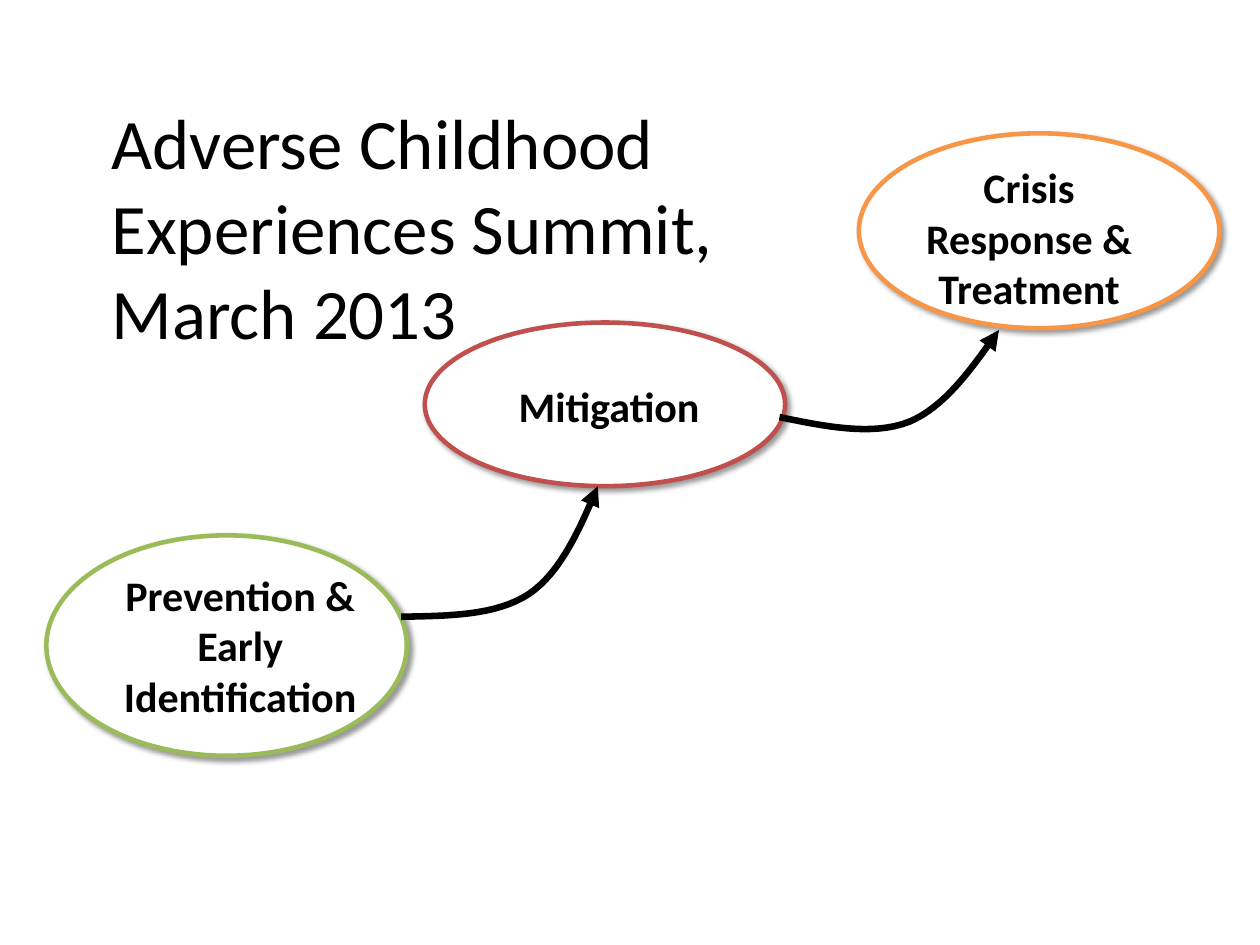
from lxml import etree
from pptx import Presentation
from pptx.dml.color import RGBColor
from pptx.enum.shapes import MSO_SHAPE
from pptx.enum.text import MSO_ANCHOR, MSO_AUTO_SIZE, PP_ALIGN
from pptx.oxml import parse_xml
from pptx.oxml.ns import nsdecls, qn
from pptx.util import Inches, Pt

BLACK = RGBColor(0x00, 0x00, 0x00)
WHITE = RGBColor(0xFF, 0xFF, 0xFF)
GREEN = RGBColor(0x9B, 0xBB, 0x59)
RED = RGBColor(0xC0, 0x50, 0x4D)
ORANGE = RGBColor(0xF7, 0x96, 0x46)

SHADOW = (
    f'<a:outerShdw {nsdecls("a")} blurRad="{Pt(4)}" dist="{Pt(3)}" dir="2700000" rotWithShape="0">'
    '<a:srgbClr val="000000"><a:alpha val="40000"/></a:srgbClr></a:outerShdw>'
)
CURVE_STEPS = 16


def write_text(shape, text, size, bold=False, align=PP_ALIGN.LEFT, space_after=0):
    frame = shape.text_frame
    frame.word_wrap = True
    frame.auto_size = MSO_AUTO_SIZE.NONE
    frame.vertical_anchor = MSO_ANCHOR.TOP
    frame.text = text
    paragraph = frame.paragraphs[0]
    paragraph.alignment = align
    paragraph.space_before = Pt(0)
    paragraph.space_after = Pt(space_after)
    font = paragraph.runs[0].font
    font.name = "Calibri"
    font.size = Pt(size)
    font.bold = bold
    font.color.rgb = BLACK


def bezier_point(p0, p1, p2, p3, t):
    """Return the point at t (0 to 1) on a cubic curve, in EMU."""
    u = 1 - t
    return tuple(
        Inches(u**3 * a + 3 * u**2 * t * b + 3 * u * t**2 * c + t**3 * d)
        for a, b, c, d in zip(p0, p1, p2, p3)
    )


presentation = Presentation()
presentation.slide_width = Inches(13.32)
presentation.slide_height = Inches(9.99)
slide = presentation.slides.add_slide(presentation.slide_layouts[5])
shapes = slide.shapes

title = shapes.title
title.left, title.top = Inches(1.08), Inches(0.99)
title.width, title.height = Inches(7.42), Inches(2.83)
write_text(title, "Adverse Childhood Experiences Summit, March 2013", size=54)

# Each stage: label, outline colour, ellipse box, label box
stages = [
    ("Prevention & Early Identification", GREEN, (0.49, 5.66, 3.81, 2.33), (1.09, 5.97, 2.9, 1.7)),
    ("Mitigation", RED, (4.49, 3.41, 3.81, 1.73), (5.14, 3.97, 2.6, 0.55)),
    ("Crisis Response & Treatment", ORANGE, (9.08, 1.41, 3.81, 2.06), (9.58, 1.66, 2.6, 1.7)),
]
for label, color, ellipse_box, label_box in stages:
    ellipse = shapes.add_shape(MSO_SHAPE.OVAL, *map(Inches, ellipse_box))
    ellipse.fill.solid()
    ellipse.fill.fore_color.rgb = WHITE
    ellipse.line.color.rgb = color
    ellipse.line.width = Pt(3.5)
    ellipse.shadow.inherit = False
    ellipse.element.spPr.find(qn("a:effectLst")).append(parse_xml(SHADOW))

    caption = shapes.add_textbox(*map(Inches, label_box))
    write_text(caption, label, size=32, bold=True, align=PP_ALIGN.CENTER, space_after=10)

# Each arrow: a start point, then two cubic curves of three points
arrows = [
    [(4.24, 6.52), (4.74, 6.51), (5.24, 6.51), (5.59, 6.28), (5.93, 6.05), (6.13, 5.59), (6.32, 5.14)],
    [(8.24, 4.41), (8.73, 4.51), (9.22, 4.61), (9.61, 4.46), (9.99, 4.3), (10.27, 3.9), (10.56, 3.49)],
]
for points in arrows:
    builder = shapes.build_freeform(*map(Inches, points[0]))
    builder.add_line_segments(
        [
            bezier_point(*points[first:first + 4], step / CURVE_STEPS)
            for first in (0, 3)
            for step in range(1, CURVE_STEPS + 1)
        ],
        close=False,
    )
    arrow = builder.convert_to_shape()
    arrow.fill.background()
    arrow.line.color.rgb = BLACK
    arrow.line.width = Pt(5)
    arrow.shadow.inherit = False
    outline = arrow.element.spPr.find(qn("a:ln"))
    etree.SubElement(outline, qn("a:round"))
    etree.SubElement(outline, qn("a:tailEnd"), type="triangle")

presentation.save("out.pptx")
